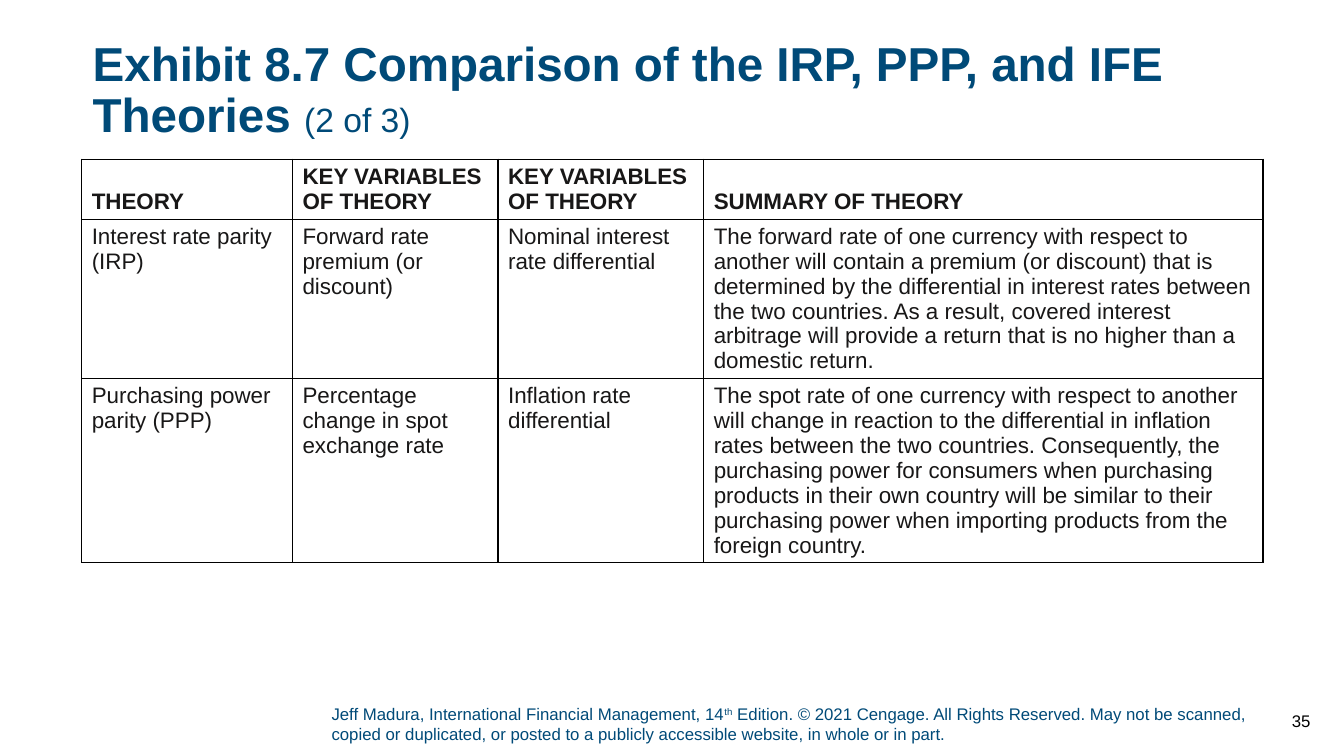
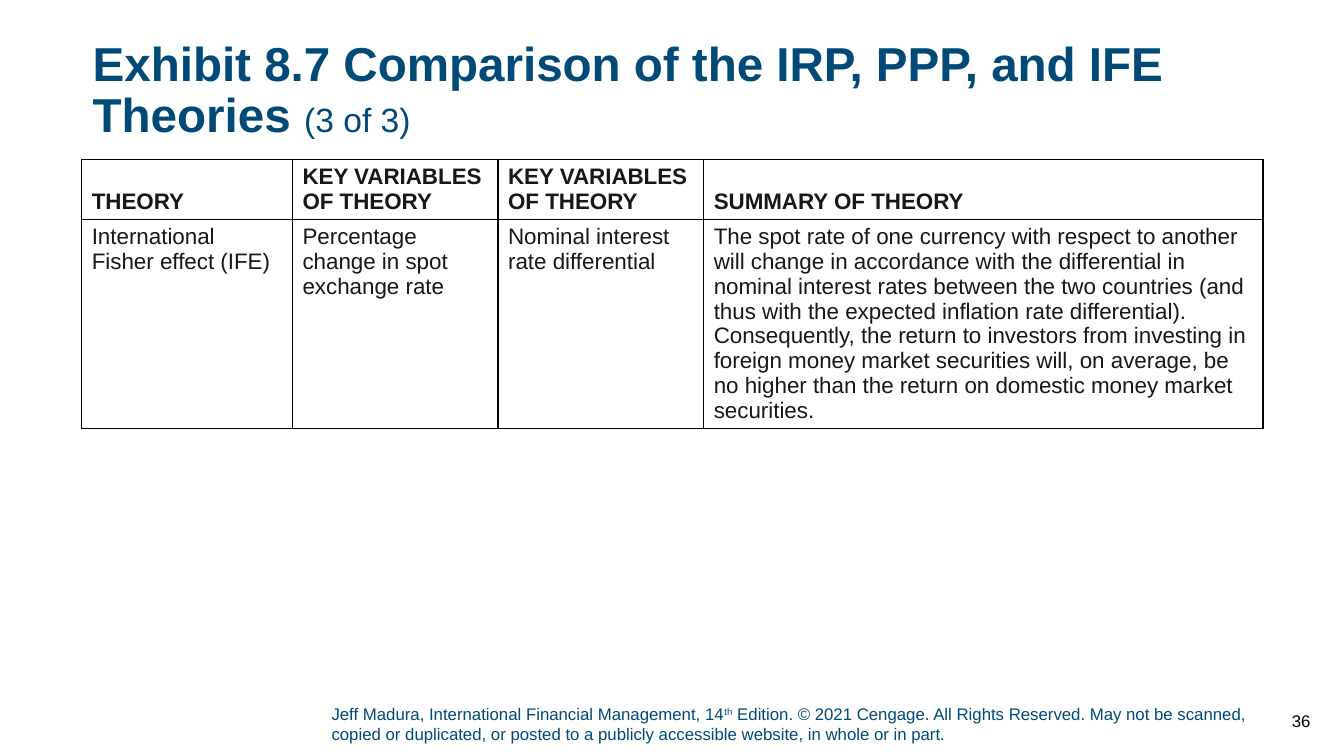
from lxml import etree
from pptx import Presentation
from pptx.dml.color import RGBColor
from pptx.enum.text import MSO_ANCHOR as Anchor, MSO_AUTO_SIZE as AutoSize, PP_ALIGN as Align
from pptx.oxml.ns import qn
from pptx.util import Inches, Pt

# Shared look
NAVY = RGBColor(0x00, 0x4A, 0x78)
INK = RGBColor(0x18, 0x17, 0x17)
BLACK = RGBColor(0x00, 0x00, 0x00)
FONT = "Arial"
SLIDE_W, SLIDE_H = Inches(13.33), Inches(7.5)

# Places as percentages of the slide: left, top, width, height
TITLE_BOX = (6.9, 5.33, 86.25, 13.47)
FOOTER_BOX = (24.67, 93.07, 69.3, 6)
NUMBER_BOX = (94.2, 92.67, 4.05, 5.33)
TABLE_LEFT, TABLE_TOP = 6.08, 21.07
COLUMNS = (15.68, 15.3, 15.3, 41.62)
ROW = 5.47

# Content
TITLE = "Exhibit 8.7 Comparison of the IRP, PPP, and IFE Theories "
FOOTER = (
    "Jeff Madura, International Financial Management, 14",
    "th",
    " Edition. © 2021 Cengage. All Rights Reserved. May not be scanned, copied or "
    "duplicated, or posted to a publicly accessible website, in whole or in part.",
)
HEADINGS = ("THEORY", "KEY VARIABLES OF THEORY", "KEY VARIABLES OF THEORY", "SUMMARY OF THEORY")
IRP = (
    "Interest rate parity (IRP)",
    "Forward rate premium (or discount)",
    "Nominal interest rate differential",
    "The forward rate of one currency with respect to another will contain a premium "
    "(or discount) that is determined by the differential in interest rates between the "
    "two countries. As a result, covered interest arbitrage will provide a return that is "
    "no higher than a domestic return.",
)
PPP = (
    "Purchasing power parity (PPP)",
    "Percentage change in spot exchange rate",
    "Inflation rate differential",
    "The spot rate of one currency with respect to another will change in reaction to the "
    "differential in inflation rates between the two countries. Consequently, the "
    "purchasing power for consumers when purchasing products in their own country will be "
    "similar to their purchasing power when importing products from the foreign country.",
)
IFE = (
    "International Fisher effect (IFE)",
    "Percentage change in spot exchange rate",
    "Nominal interest rate differential",
    "The spot rate of one currency with respect to another will change in accordance with "
    "the differential in nominal interest rates between the two countries (and thus with "
    "the expected inflation rate differential). Consequently, the return to investors from "
    "investing in foreign money market securities will, on average, be no higher than the "
    "return on domestic money market securities.",
)
# Slide number, part of the exhibit, theories in the table
PAGES = ((35, "(2 of 3)", (IRP, PPP)), (36, "(3 of 3)", (IFE,)))


def across(percent):
    return int(SLIDE_W * percent / 100)


def down(percent):
    return int(SLIDE_H * percent / 100)


def place(box):
    left, top, width, height = box
    return across(left), down(top), across(width), down(height)


def write(paragraph, text, size=16, color=INK, bold=False, raised=False):
    """Add one formatted run to a paragraph."""
    run = paragraph.add_run()
    run.text = text
    font = run.font
    font.name, font.size, font.bold = FONT, Pt(size), bold
    font.color.rgb = color
    if raised:
        run._r.get_or_add_rPr().set("baseline", "30000")


def set_frame(frame, anchor, margins=None):
    frame.word_wrap = True
    frame.auto_size = AutoSize.NONE
    frame.vertical_anchor = anchor
    if margins:
        (frame.margin_left, frame.margin_top,
         frame.margin_right, frame.margin_bottom) = map(Inches, margins)
    return frame.paragraphs[0]


def add_title(slide, part):
    title = slide.shapes.title
    title.left, title.top, title.width, title.height = place(TITLE_BOX)
    line = set_frame(title.text_frame, Anchor.TOP, (0, 0, 0, 0))
    line.alignment = Align.LEFT
    line.line_spacing = 0.9
    write(line, TITLE, size=34, color=NAVY, bold=True)
    write(line, part, size=24, color=NAVY)


def add_footer(slide, number):
    footer = slide.shapes.add_textbox(*place(FOOTER_BOX))
    line = set_frame(footer.text_frame, Anchor.BOTTOM, (0, 0, 0, 0.05))
    for text in FOOTER:
        write(line, text, size=12, color=NAVY, raised=text == "th")

    page = slide.shapes.add_textbox(*place(NUMBER_BOX))
    line = set_frame(page.text_frame, Anchor.MIDDLE)
    line.alignment = Align.RIGHT
    write(line, str(number), size=12, color=BLACK)


def add_borders(cell):
    """Draw a thin black line on all four sides of a cell."""
    properties = cell._tc.get_or_add_tcPr()
    for side in ("a:lnL", "a:lnR", "a:lnT", "a:lnB"):
        edge = etree.SubElement(properties, qn(side), w=str(Pt(1)))
        fill = etree.SubElement(edge, qn("a:solidFill"))
        etree.SubElement(fill, qn("a:srgbClr"), val=str(BLACK))


def add_theories(slide, theories):
    rows = (HEADINGS, *theories)
    box = (TABLE_LEFT, TABLE_TOP, sum(COLUMNS), ROW * len(rows))
    table = slide.shapes.add_table(len(rows), len(COLUMNS), *place(box)).table
    table.first_row = table.horz_banding = False
    for column, width in zip(table.columns, COLUMNS):
        column.width = across(width)
    for r, texts in enumerate(rows):
        heading = r == 0
        for c, text in enumerate(texts):
            cell = table.cell(r, c)
            add_borders(cell)
            cell.fill.background()
            cell.vertical_anchor = Anchor.BOTTOM if heading else Anchor.TOP
            write(cell.text_frame.paragraphs[0], text, bold=heading)


def main():
    deck = Presentation()
    deck.slide_width, deck.slide_height = SLIDE_W, SLIDE_H
    title_only = deck.slide_layouts[5]
    for number, part, theories in PAGES:
        slide = deck.slides.add_slide(title_only)
        add_footer(slide, number)
        add_title(slide, part)
        add_theories(slide, theories)
    deck.save("out.pptx")


if __name__ == "__main__":
    main()
